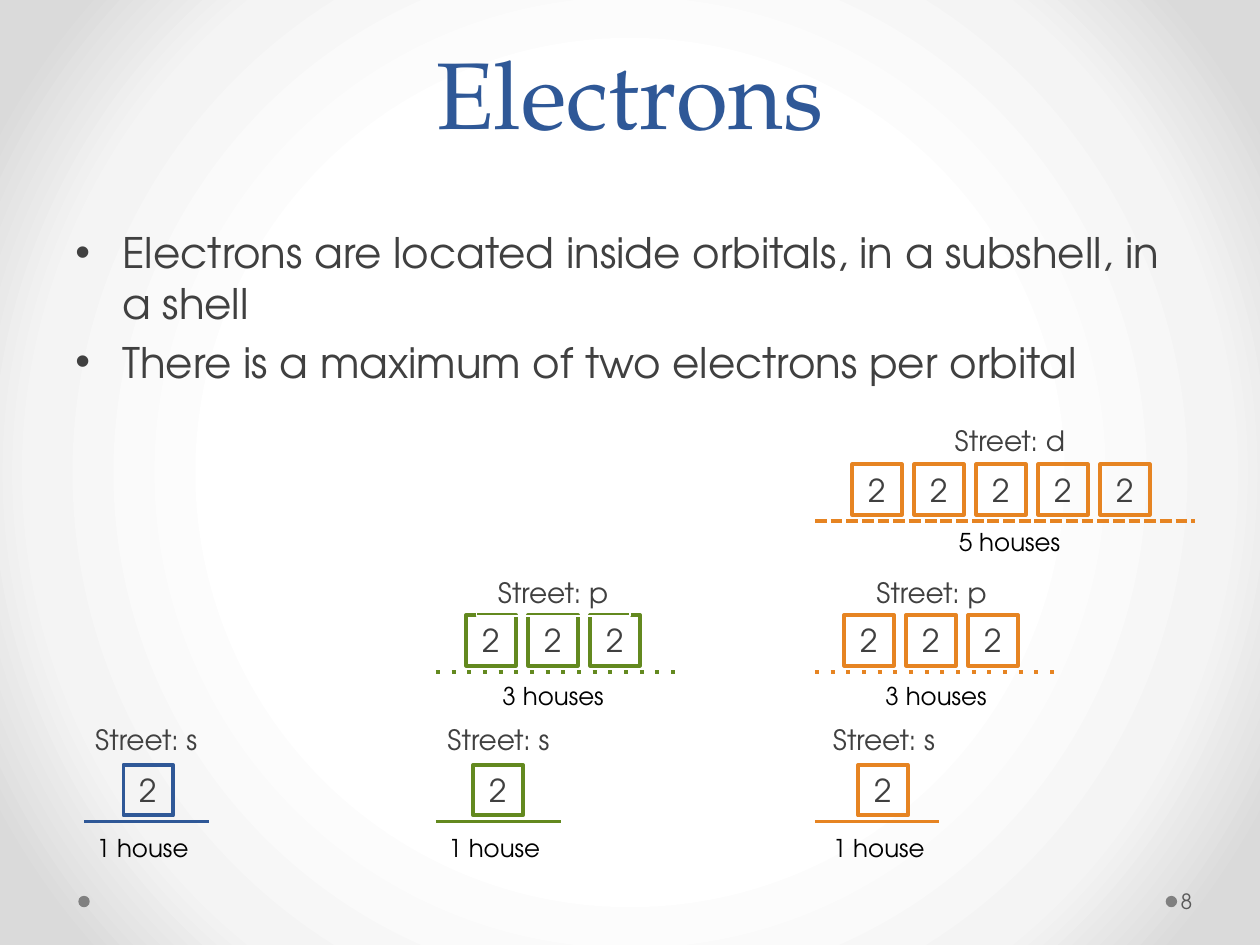
from lxml import etree
from pptx import Presentation
from pptx.dml.color import RGBColor
from pptx.enum import shapes, text
from pptx.oxml import parse_xml
from pptx.oxml.ns import nsdecls, qn
from pptx.util import Cm, Pt

SANS, SERIF = "TeX Gyre Adventor", "TeX Gyre Pagella"
GREY, BLUE, GREEN, ORANGE = "404040", "2F5897", "63891F", "E68422"
LEFT, CENTER = text.PP_ALIGN.LEFT, text.PP_ALIGN.CENTER
TOP, MIDDLE = text.MSO_ANCHOR.TOP, text.MSO_ANCHOR.MIDDLE

TITLE = "Electrons"
POINTS = [
    "Electrons are located inside orbitals, in a subshell, in a shell",
    "There is a maximum of two electrons per orbital",
]
GLOW = [(50, "FFFFFF"), (76, "F4F4F4"), (92, "DADADA")]

# Lengths are in cm.
DOTS = [23.5, 1.58]
# subshell: houses, label top, road top, road length, caption top, dash
KINDS = {
    "s": (1, 14.45, 16.56, 2.51, 16.66, None),
    "p": (3, 11.48, 13.54, 4.88, 13.6, "dot"),
    "d": (5, 8.41, 10.5, 7.65, 10.5, "sysDash"),
}
# subshell, colour, road left, first house left, label centre, caption left, label edge
STREETS = [
    ("s", BLUE, 1.7, 2.49, 2.95, 1.7, None),
    ("s", GREEN, 8.79, 9.54, 10.05, 8.79, None),
    ("p", GREEN, 8.79, 9.4, 11.15, 9.88, "FFFFFF"),
    ("s", ORANGE, 16.43, 17.3, 17.82, 16.54, None),
    ("p", ORANGE, 16.43, 17.02, 18.78, 17.6, None),
    ("d", ORANGE, 16.43, 17.18, 20.36, 19.08, None),
]
HOUSE_W, HOUSE_H, PITCH, HOUSE_UP = 1, 1.02, 1.25, 1.14
LABEL_W, LABEL_H = 3.1, 0.94


def rgb(code):
    return RGBColor.from_string(code)


def write(frame, lines, size, color=GREY, font=SANS, align=LEFT, anchor=TOP):
    frame.word_wrap, frame.vertical_anchor = True, anchor
    for i, line in enumerate(lines):
        para = frame.paragraphs[0] if i == 0 else frame.add_paragraph()
        para.text, para.alignment = line, align
        face = para.runs[0].font
        for key, val in {"size": Pt(size), "name": font}.items():
            setattr(face, key, val)
        face.color.rgb = rgb(color)


def note(slide, box, lines, size, **style):
    """Add a text box."""
    item = slide.shapes.add_textbox(*map(Cm, box))
    write(item.text_frame, lines, size, **style)
    return item


def paint(slide):
    """Give the background its radial gradient."""
    stops = "".join(
        f'<a:gs pos="{pos * 1000}"><a:srgbClr val="{code}"/></a:gs>' for pos, code in GLOW)
    back = parse_xml(
        f'<p:bg {nsdecls("p", "a")}><p:bgPr><a:gradFill rotWithShape="1">'
        f'<a:gsLst>{stops}</a:gsLst><a:path path="circle">'
        '<a:fillToRect l="50000" t="50000" r="50000" b="50000"/></a:path>'
        '</a:gradFill><a:effectLst/></p:bgPr></p:bg>')
    slide.element.cSld.insert(0, back)


def bullet(para):
    para.space_before = Pt(4.8)
    props = para._p.get_or_add_pPr()
    props.set("marL", str(Cm(0.95)))
    props.set("indent", str(Cm(-0.95)))
    etree.SubElement(props, qn("a:buFont")).set("typeface", "Arial")
    etree.SubElement(props, qn("a:buChar")).set("char", "•")


def stroke(item, color, width=2.25):
    item.line.color.rgb, item.line.width = rgb(color), Pt(width)


def house(slide, x, y, color):
    item = slide.shapes.add_shape(
        shapes.MSO_SHAPE.RECTANGLE, *map(Cm, (x, y, HOUSE_W, HOUSE_H)))
    item.shadow.inherit = False
    item.fill.background()
    stroke(item, color)
    frame = item.text_frame
    for side in ("left", "right", "top", "bottom"):
        setattr(frame, "margin_" + side, 0)
    write(frame, ["2"], 18, align=CENTER, anchor=MIDDLE)


def road(slide, x, y, size, color, dash):
    item = slide.shapes.add_connector(
        shapes.MSO_CONNECTOR.STRAIGHT, *map(Cm, (x, y, x + size, y)))
    stroke(item, color)
    props = item._element.spPr
    if dash:
        etree.SubElement(props.find(qn("a:ln")), qn("a:prstDash")).set("val", dash)
    etree.SubElement(props, qn("a:effectLst"))


def street(slide, kind, color, left, first, mid, cap, edge):
    count, high, y, size, low, dash = KINDS[kind]
    for i in range(count):
        house(slide, first + i * PITCH, y - HOUSE_UP, color)
    road(slide, left, y, size, color, dash)
    label = note(slide, (mid - LABEL_W / 2, high, LABEL_W, LABEL_H),
                 [f"Street: {kind}"], 16, align=CENTER)
    if edge:
        stroke(label, edge, 0.75)
    word, wide = ("house", 2.39) if count == 1 else ("houses", 2.57)
    frame = note(slide, (cap, low, wide, 0.86), [f"{count} {word}"], 14,
                 color="000000").text_frame
    frame.word_wrap, frame.auto_size = False, text.MSO_AUTO_SIZE.SHAPE_TO_FIT_TEXT


def main():
    deck = Presentation()
    deck.slide_width, deck.slide_height = Cm(25.4), Cm(19.05)
    slide = deck.slides.add_slide(deck.slide_layouts[5])
    paint(slide)

    for x in DOTS:
        dot = slide.shapes.add_shape(
            shapes.MSO_SHAPE.OVAL, *map(Cm, (x, 18.06, 0.23, 0.23)))
        dot.shadow.inherit = False
        dot.fill.solid()
        dot.fill.fore_color.rgb = rgb("808080")
        dot.line.fill.background()

    title = slide.shapes.title
    place = {"left": 1.27, "top": 0.07, "width": 22.86, "height": 3.05}
    for key, val in place.items():
        setattr(title, key, Cm(val))
    write(title.text_frame, [TITLE], 54, color=BLUE, font=SERIF, align=CENTER,
          anchor=text.MSO_ANCHOR.BOTTOM)
    title.text_frame.paragraphs[0].line_spacing = Pt(58)

    body = note(slide, (1.27, 4.45, 22.86, 12.57), POINTS, 24)
    for para in body.text_frame.paragraphs:
        bullet(para)

    for row in STREETS:
        street(slide, *row)

    page = note(slide, (23.72, 17.65, 1.55, 1.02), ["8"], 12,
                color="595959", anchor=MIDDLE)
    page.text_frame.margin_left = Cm(0.08)
    deck.save("out.pptx")


if __name__ == "__main__":
    main()
